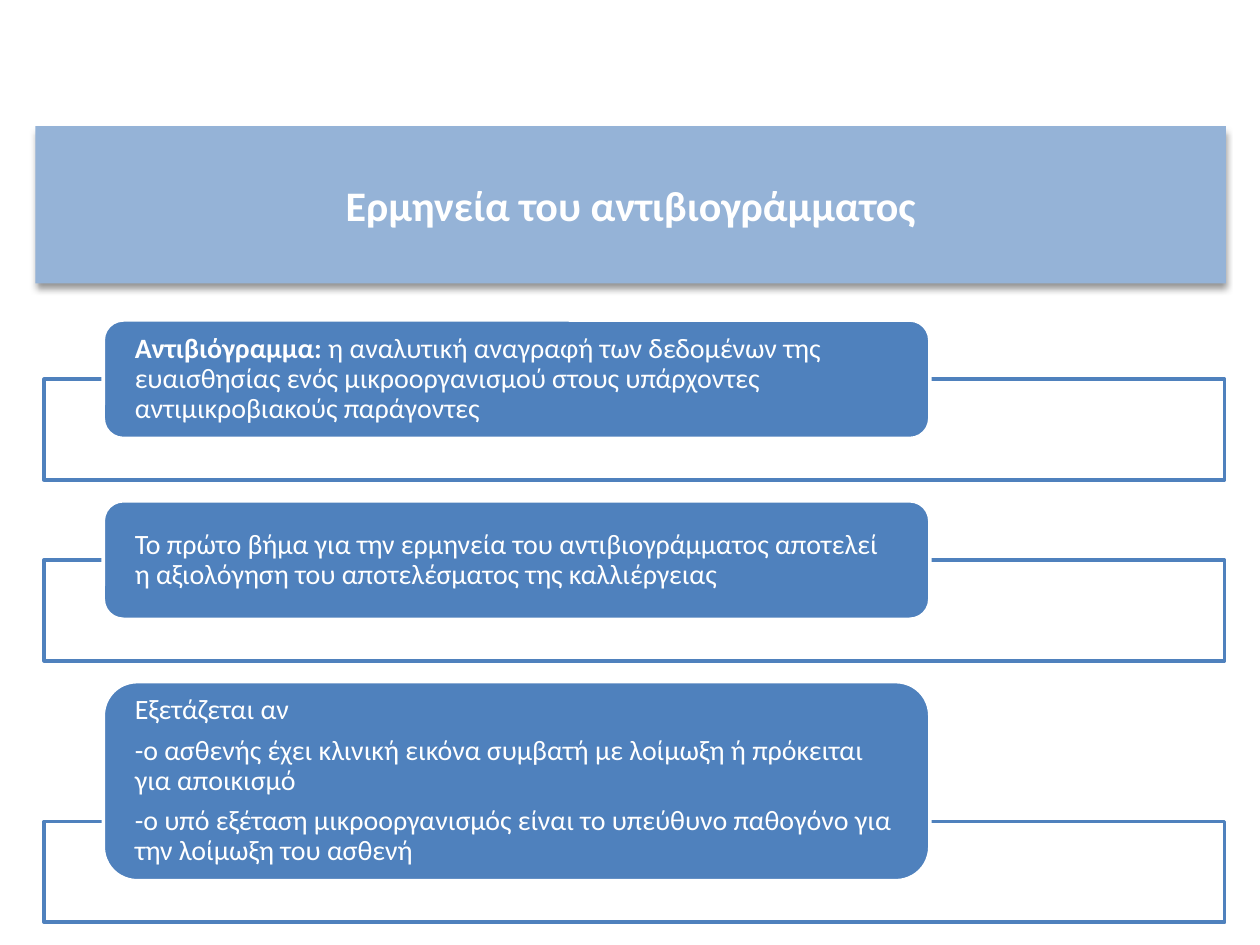
"""Build the slide on interpreting an antibiogram."""
from dataclasses import dataclass

from lxml import etree
from pptx import Presentation
from pptx.dml.color import RGBColor
from pptx.enum.shapes import MSO_SHAPE
from pptx.enum.text import MSO_ANCHOR, MSO_AUTO_SIZE, PP_ALIGN
from pptx.oxml import parse_xml
from pptx.oxml.ns import nsdecls, qn
from pptx.shapes.autoshape import Shape
from pptx.shapes.shapetree import GroupShapes
from pptx.util import Inches, Pt

RECTANGLE = MSO_SHAPE.RECTANGLE
ROUNDED = MSO_SHAPE.ROUNDED_RECTANGLE
MIDDLE = MSO_ANCHOR.MIDDLE
NO_FIT = MSO_AUTO_SIZE.NONE
LEFT, CENTER = PP_ALIGN.LEFT, PP_ALIGN.CENTER

CELL = Inches(0.1)
COLUMNS, ROWS = 100, 75
TITLE_ONLY = 5
CORNER = 0.17
TEXT_INDENT = 2.5
CORNER_INSET = 0.29 * CORNER


@dataclass(frozen=True)
class Theme:
    font: str = "Calibri"
    white: RGBColor = RGBColor(0xFF, 0xFF, 0xFF)
    blue: RGBColor = RGBColor(0x4F, 0x81, 0xBD)
    banner: RGBColor = RGBColor(0x95, 0xB3, 0xD7)
    title_size: Pt = Pt(24)
    body_size: Pt = Pt(16)
    line_width: Pt = Pt(2)


@dataclass(frozen=True)
class Area:
    column: float
    row: float
    width: float
    height: float

    def placement(self) -> dict[str, int]:
        """Return the area as shape position and size."""
        values = (self.column, self.row, self.width, self.height)
        return {name: int(value * CELL) for name, value in zip(("left", "top", "width", "height"), values)}


@dataclass(frozen=True)
class Span:
    text: str
    bold: bool = False


@dataclass(frozen=True)
class Card:
    height: float
    paragraphs: tuple[tuple[Span, ...], ...]


THEME = Theme()
TITLE_AREA = Area(2.8, 10, 94.5, 12.5)
FIRST_ROW, CARD_GAP = 25.4, 4.95
CARD_COLUMN, CARD_WIDTH = 8.2, 65.6
FRAME_COLUMN, FRAME_WIDTH, FRAME_HEIGHT, FRAME_OVERLAP = 3.5, 93.7, 8, 4.7
TITLE = Span("Ερμηνεία του αντιβιογράμματος", bold=True)
CARDS = (
    Card(9.4, ((
        Span("Αντιβιόγραμμα: ", bold=True),
        Span("η αναλυτική αναγραφή των δεδομένων της ευαισθησίας ενός μικροοργανισμού "
             "στους υπάρχοντες αντιμικροβιακούς παράγοντες"),
    ),)),
    Card(9.4, ((
        Span("Το πρώτο βήμα για την ερμηνεία του αντιβιογράμματος αποτελεί "
             "η αξιολόγηση του αποτελέσματος της καλλιέργειας"),
    ),)),
    Card(15.8, (
        (Span("Εξετάζεται αν"),),
        (Span("-ο ασθενής έχει κλινική εικόνα συμβατή με λοίμωξη ή πρόκειται για αποικισμό"),),
        (Span("-ο υπό εξέταση μικροοργανισμός είναι το υπεύθυνο παθογόνο "
              "για την λοίμωξη του ασθενή"),),
    )),
)


def apply_format(target: object, values: dict[str, object]) -> None:
    """Set every named attribute on the target."""
    for name, value in values.items():
        setattr(target, name, value)


def add_span(paragraph: object, span: Span, size: Pt) -> None:
    """Append one formatted run to a paragraph."""
    run = paragraph.add_run()
    run.text = span.text
    apply_format(run.font, {"name": THEME.font, "size": size, "bold": span.bold})
    run.font.color.rgb = THEME.white


def paint(shape: Shape, fill: RGBColor, line: RGBColor) -> None:
    """Give a shape a flat fill and an outline."""
    shape.shadow.inherit = False
    shape.fill.solid()
    shape.fill.fore_color.rgb = fill
    shape.line.color.rgb = line
    shape.line.width = THEME.line_width


def draw_title(title: Shape) -> None:
    """Turn the title placeholder into a shadowed banner."""
    apply_format(title, TITLE_AREA.placement())
    title.fill.solid()
    title.fill.fore_color.rgb = THEME.banner
    title.line.fill.background()
    title.shadow.inherit = False
    effects = title.element.spPr.find(qn("a:effectLst"))
    effects.append(parse_xml(
        f'<a:outerShdw {nsdecls("a")} blurRad="{Pt(4)}" dist="{Pt(3)}" dir="5400000" rotWithShape="0">'
        '<a:srgbClr val="000000"><a:alpha val="40000"/></a:srgbClr></a:outerShdw>'))
    apply_format(title.text_frame, {"vertical_anchor": MIDDLE, "auto_size": NO_FIT})
    paragraph = title.text_frame.paragraphs[0]
    paragraph.alignment = CENTER
    add_span(paragraph, TITLE, THEME.title_size)


def draw_frame(shapes: GroupShapes, row: float) -> None:
    """Draw the outlined box behind a card."""
    area = Area(FRAME_COLUMN, row, FRAME_WIDTH, FRAME_HEIGHT)
    frame = shapes.add_shape(RECTANGLE, **area.placement())
    paint(frame, THEME.white, THEME.blue)
    color = frame.element.spPr.find(qn("a:solidFill"))[0]
    etree.SubElement(color, qn("a:alpha"), val="90000")


def draw_card(shapes: GroupShapes, card: Card, row: float) -> None:
    """Draw a rounded card with its paragraphs."""
    area = Area(CARD_COLUMN, row, CARD_WIDTH, card.height)
    box = shapes.add_shape(ROUNDED, **area.placement())
    box.adjustments[0] = CORNER
    paint(box, THEME.blue, THEME.white)
    side = int((TEXT_INDENT - CORNER_INSET * card.height) * CELL)
    apply_format(box.text_frame, {
        "word_wrap": True, "vertical_anchor": MIDDLE,
        "margin_left": side, "margin_right": side, "margin_top": 0, "margin_bottom": 0,
    })
    for index, spans in enumerate(card.paragraphs):
        paragraph = box.text_frame.add_paragraph() if index else box.text_frame.paragraphs[0]
        apply_format(paragraph, {"alignment": LEFT, "line_spacing": 0.9, "space_after": Pt(5.6)})
        for span in spans:
            add_span(paragraph, span, THEME.body_size)


def main() -> None:
    """Build and save the deck."""
    deck = Presentation()
    apply_format(deck, {"slide_width": COLUMNS * CELL, "slide_height": ROWS * CELL})
    page = deck.slides.add_slide(deck.slide_layouts[TITLE_ONLY])
    draw_title(page.shapes.title)
    diagram = page.shapes.add_group_shape()
    row = FIRST_ROW
    for card in CARDS:
        bottom = row + card.height
        draw_frame(diagram.shapes, bottom - FRAME_OVERLAP)
        draw_card(diagram.shapes, card, row)
        row = bottom + CARD_GAP
    deck.save("out.pptx")


if __name__ == "__main__":
    main()
